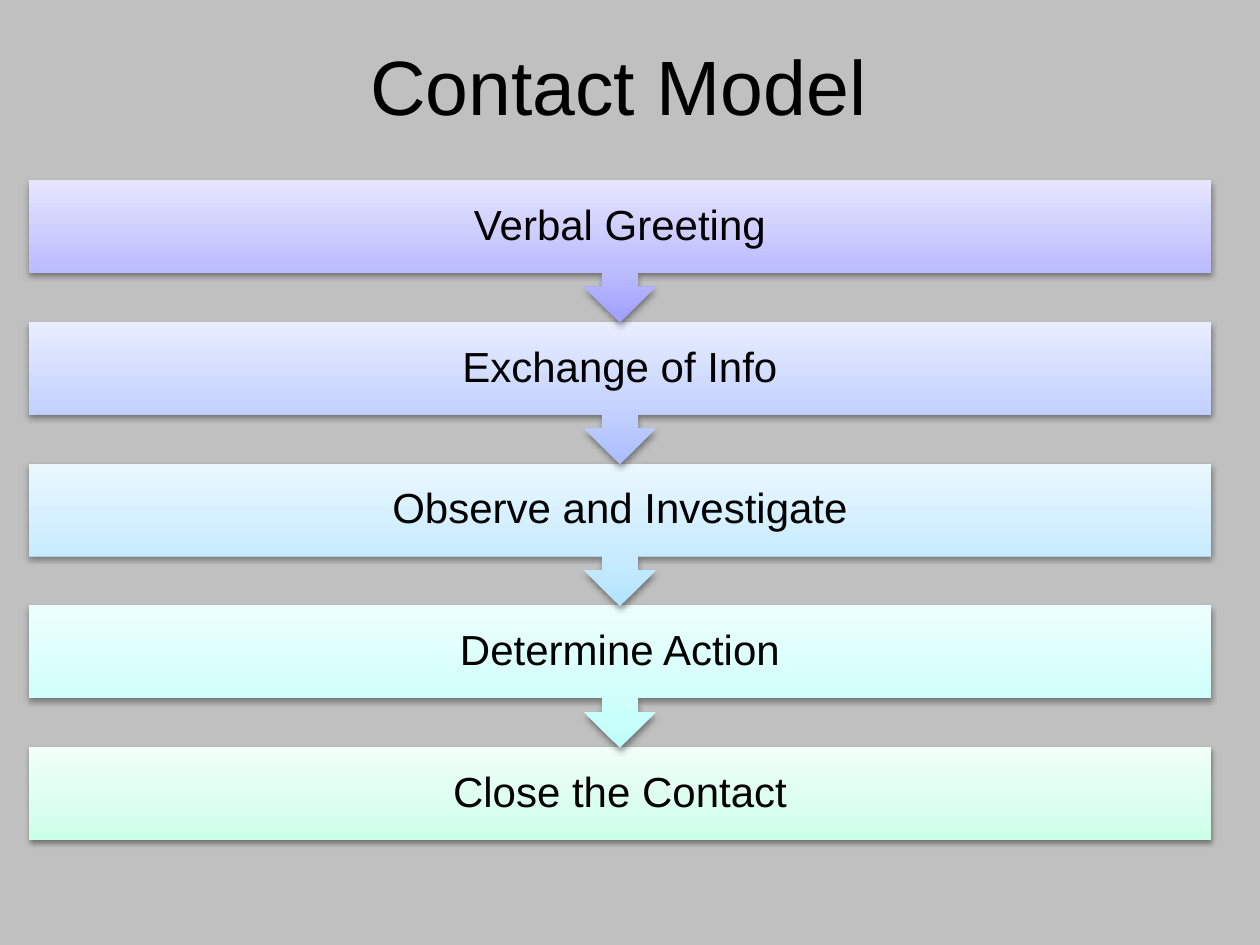
from lxml import etree
from pptx import Presentation
from pptx.dml.color import RGBColor
from pptx.enum.shapes import MSO_SHAPE
from pptx.enum.text import MSO_ANCHOR, PP_ALIGN
from pptx.oxml import parse_xml
from pptx.oxml.ns import nsdecls, qn
from pptx.util import Inches, Pt

RECT = MSO_SHAPE.RECTANGLE
CALLOUT = MSO_SHAPE.UP_ARROW_CALLOUT
MIDDLE = MSO_ANCHOR.MIDDLE
CENTER = PP_ALIGN.CENTER
NS = nsdecls("a")

STEPS = [
    ("Verbal Greeting", ("9F9FFF", "BBBBFF", "E5E5FF")),
    ("Exchange of Info", ("A9BDFF", "C2D0FF", "E8EDFF")),
    ("Observe and Investigate", ("B2E4FF", "C8EBFF", "EAF7FF")),
    ("Determine Action", ("BDFFF9", "D0FFFB", "EDFFFD")),
    ("Close the Contact", ("CCFFE8", "DAFFEE", "F1FFF8")),
]
LEFT, TOP, WIDTH = 0.23, 1.43, 9.38
PITCH, BAR_HEIGHT, CALLOUT_HEIGHT = 4.5 / 4, 0.74, 1.13
SHADOW = (
    f'<a:effectLst {NS}><a:outerShdw blurRad="40000" dist="20000" dir="5400000" '
    'rotWithShape="0"><a:srgbClr val="000000"><a:alpha val="38000"/></a:srgbClr>'
    '</a:outerShdw></a:effectLst>'
)


def rgb(value):
    return RGBColor.from_string(value)


def add_text(shapes, text, left, top, width, height, size, inset_x, inset_y):
    tf = shapes.add_textbox(Inches(left), Inches(top), Inches(width), Inches(height)).text_frame
    tf.word_wrap = True
    tf.vertical_anchor = MIDDLE
    tf.margin_left = tf.margin_right = Inches(inset_x)
    tf.margin_top = tf.margin_bottom = Inches(inset_y)
    tf.text = text
    p = tf.paragraphs[0]
    p.alignment = CENTER
    r = p.runs[0]
    r.font.name = "Arial"
    r.font.size = Pt(size)
    r.font.color.rgb = rgb("000000")
    return p


prs = Presentation()
prs.slide_width = Inches(10)
prs.slide_height = Inches(7.5)
s = prs.slides.add_slide(prs.slide_layouts[6])
s.background.fill.solid()
s.background.fill.fore_color.rgb = rgb("C0C0C0")

add_text(s.shapes, "Contact Model", 0.21, 0.15, 9.4, 1.05, 44, 0.1, 0.05)

group = s.shapes.add_group_shape()
for i, (label, colors) in reversed(list(enumerate(STEPS))):
    top = TOP + PITCH * i
    is_last = i == len(STEPS) - 1
    kind, height = (RECT, BAR_HEIGHT) if is_last else (CALLOUT, CALLOUT_HEIGHT)
    sp = group.shapes.add_shape(kind, Inches(LEFT), Inches(top), Inches(WIDTH), Inches(height))
    sp.rotation = 0 if is_last else 180
    sp.line.fill.background()
    stops = "".join(
        f'<a:gs pos="{pos}"><a:srgbClr val="{rgb(color)}"/></a:gs>'
        for pos, color in zip((0, 35000, 100000), colors)
    )
    ln = sp.line._get_or_add_ln()
    ln.addprevious(parse_xml(
        f'<a:gradFill {NS} rotWithShape="0"><a:gsLst>{stops}</a:gsLst>'
        '<a:lin ang="16200000" scaled="0"/></a:gradFill>'
    ))
    ln.addnext(parse_xml(SHADOW))

    p = add_text(group.shapes, label, LEFT, top, WIDTH, BAR_HEIGHT, 24, 0.19, 0.19)
    p.line_spacing = 0.9
    p.space_after = Pt(0)
    space = p._p.pPr.find(qn("a:spcAft"))
    space.remove(space[0])
    etree.SubElement(space, qn("a:spcPct"), val="35000")

prs.save("out.pptx")
